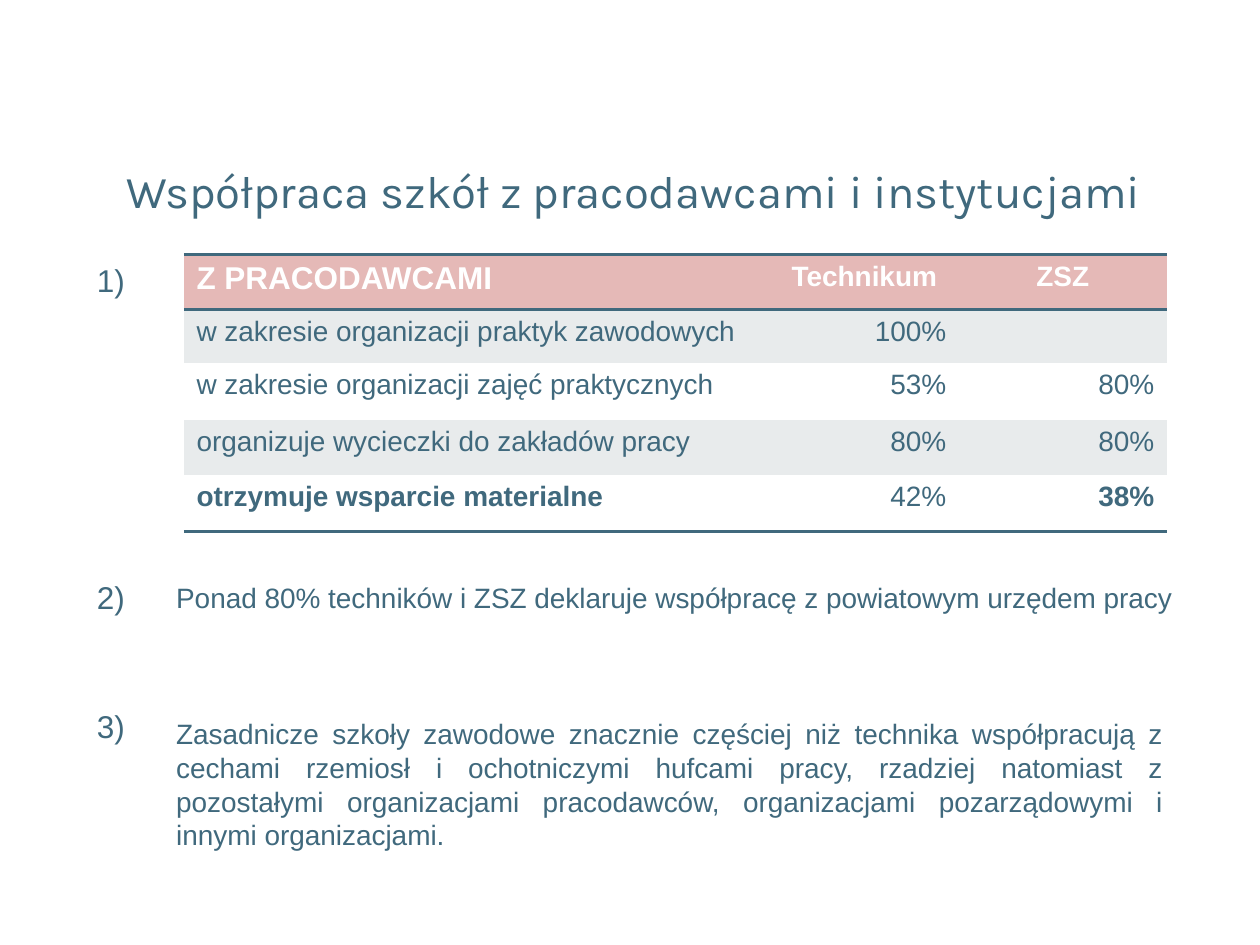
from dataclasses import dataclass

from lxml import etree
from pptx import Presentation
from pptx import util as u
from pptx.dml.color import RGBColor
from pptx.enum import text
from pptx.oxml import ns

ALIGN = text.PP_ALIGN


@dataclass(frozen=True)
class Theme:
    ink: str = "40697D"
    header: str = "E5B9B7"
    band: str = "E8EBEC"
    white: str = "FFFFFF"
    title_font: str = "Karla"
    body_font: str = "Arial"
    title_size: int = 26
    label_size: int = 18
    body_size: int = 16
    rule_width: int = 2


class SlideBuilder:
    def __init__(self, slide, theme):
        self.slide = slide
        self.theme = theme

    def add_words(self, frame, words, align=ALIGN.LEFT, color=None, **style):
        """Fill the first paragraph of a text frame."""
        paragraph = frame.paragraphs[0]
        paragraph.alignment = align
        run = paragraph.add_run()
        run.text = words
        values = {"name": self.theme.body_font, "size": self.theme.body_size, "bold": False}
        values.update(style)
        values["size"] = u.Pt(values["size"])
        for name, value in values.items():
            setattr(run.font, name, value)
        run.font.color.rgb = RGBColor.from_string(color or self.theme.ink)

    def text_box(self, box, words, wrap=True, anchor=text.MSO_ANCHOR.TOP, **style):
        shape = self.slide.shapes.add_textbox(*map(u.Inches, box))
        frame = shape.text_frame
        settings = {"word_wrap": wrap, "vertical_anchor": anchor}
        for name, value in settings.items():
            setattr(frame, name, value)
        self.add_words(frame, words, **style)

    def borders(self, cell, ruled):
        """Rule the named sides (T, B) of a cell and clear the others."""
        properties = cell._tc.get_or_add_tcPr()
        for side in "LRTB":
            line = etree.SubElement(properties, ns.qn(f"a:ln{side}"))
            if side in ruled:
                line.set("w", str(u.Pt(self.theme.rule_width)))
                fill = etree.SubElement(line, ns.qn("a:solidFill"))
                etree.SubElement(fill, ns.qn("a:srgbClr"), val=self.theme.ink)
            else:
                etree.SubElement(line, ns.qn("a:noFill"))

    def table(self, box, widths, heights, rows, bold_cells):
        theme = self.theme
        frame = self.slide.shapes.add_table(len(rows), len(widths), *map(u.Inches, box))
        table = frame.table
        table.horz_banding = False
        for column, width in zip(table.columns, widths):
            column.width = u.Inches(width)
        for row, height in zip(table.rows, heights):
            row.height = u.Inches(height)

        last = len(rows) - 1
        for r, values in enumerate(rows):
            header = r == 0
            fill = theme.header if header else theme.band if r % 2 else theme.white
            ruled = ("T" if r <= 1 else "") + ("B" if r in (0, last) else "")
            for c, value in enumerate(values):
                cell = table.cell(r, c)
                self.borders(cell, ruled)
                cell.fill.solid()
                cell.fill.fore_color.rgb = RGBColor.from_string(fill)
                if not value:
                    continue
                number_align = ALIGN.CENTER if header else ALIGN.RIGHT
                self.add_words(
                    cell.text_frame, value,
                    align=number_align if c else ALIGN.LEFT,
                    color=theme.white if header else theme.ink,
                    size=theme.label_size if (r, c) == (0, 0) else theme.body_size,
                    bold=header or (r, c) in bold_cells,
                )


def main():
    theme = Theme()
    presentation = Presentation()
    presentation.slide_width = u.Inches(10)
    presentation.slide_height = u.Inches(7.5)
    slide = presentation.slides.add_slide(presentation.slide_layouts[6])
    builder = SlideBuilder(slide, theme)

    # Title
    builder.text_box(
        (0.35, 1.25, 9.37, 0.53), "Współpraca szkół z pracodawcami i instytucjami",
        anchor=text.MSO_ANCHOR.BOTTOM, align=ALIGN.CENTER,
        name=theme.title_font, size=theme.title_size,
    )

    # Cooperation with employers
    builder.table(
        (1.46, 2.02, 7.8, 2.2),
        widths=(4.65, 1.5, 1.65),
        heights=(0.44, 0.42, 0.45, 0.44, 0.45),
        rows=[
            ("Z PRACODAWCAMI", "Technikum", "ZSZ"),
            ("w zakresie organizacji praktyk zawodowych", "100%", ""),
            ("w zakresie organizacji zajęć praktycznych", "53%", "80%"),
            ("organizuje wycieczki do zakładów pracy", "80%", "80%"),
            ("otrzymuje wsparcie materialne", "42%", "38%"),
        ],
        bold_cells={(4, 0), (4, 2)},
    )

    # Point numbers
    for number, top in enumerate((2.02, 4.54, 5.56), start=1):
        builder.text_box((0.67, top, 0.43, 0.4), f"{number})", wrap=False, size=theme.label_size)

    # Points two and three
    builder.text_box(
        (1.3, 4.56, 8.43, 0.37),
        "Ponad 80% techników i ZSZ deklaruje współpracę z powiatowym urzędem pracy",
    )
    builder.text_box(
        (1.3, 5.64, 8.03, 1.18),
        "Zasadnicze szkoły zawodowe znacznie częściej niż technika współpracują "
        "z cechami rzemiosł i ochotniczymi hufcami pracy, rzadziej natomiast "
        "z pozostałymi organizacjami pracodawców, organizacjami pozarządowymi "
        "i innymi organizacjami.",
        align=ALIGN.JUSTIFY,
    )

    presentation.save("out.pptx")


if __name__ == "__main__":
    main()
